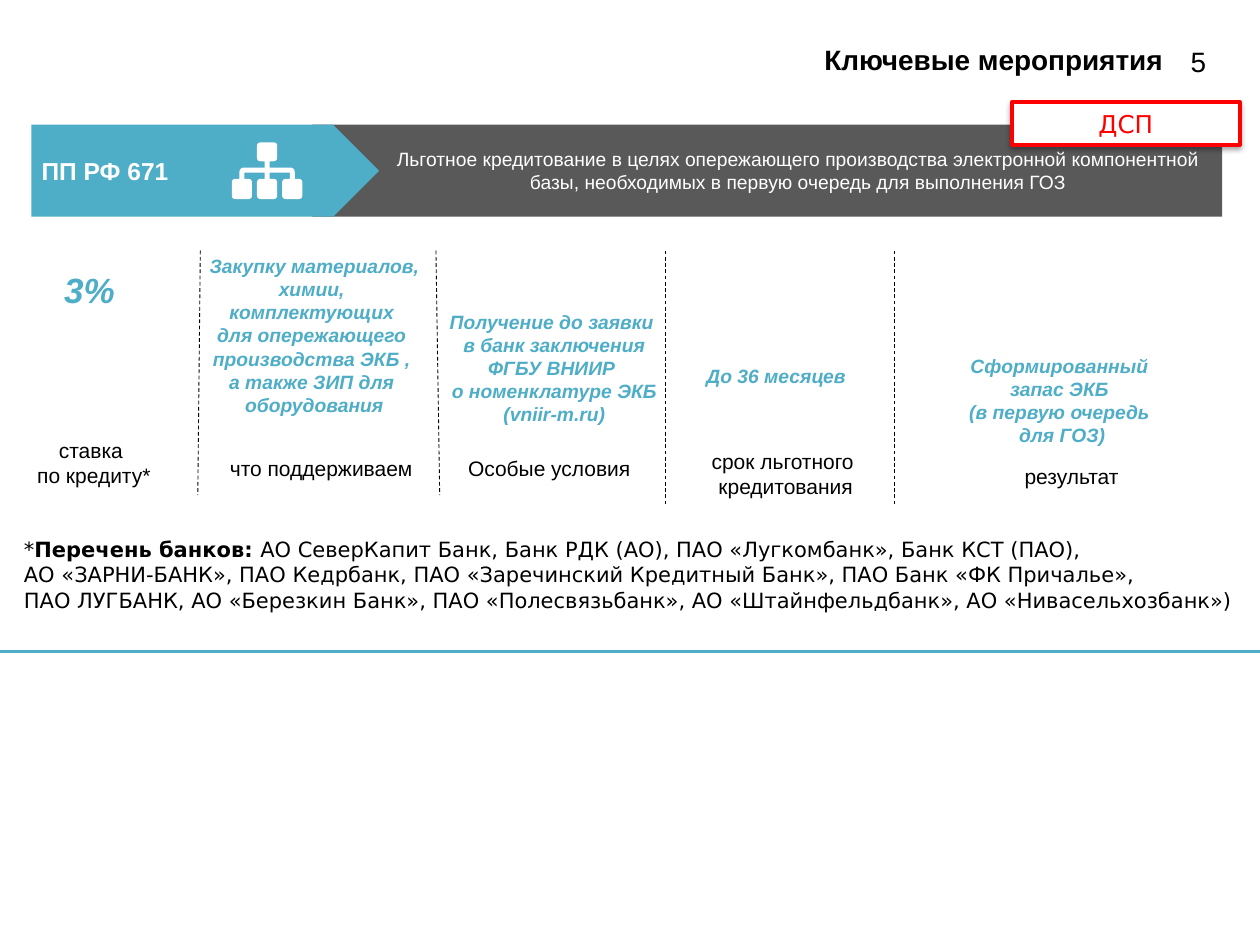
from lxml import etree
from pptx import Presentation
from pptx.dml.color import RGBColor
from pptx.enum.dml import MSO_LINE_DASH_STYLE as Dash
from pptx.enum.shapes import MSO_CONNECTOR, MSO_SHAPE
from pptx.enum.text import MSO_ANCHOR as Anchor, MSO_AUTO_SIZE as AutoSize, PP_ALIGN as Align
from pptx.oxml import parse_xml
from pptx.oxml.ns import qn
from pptx.util import Inches, Pt

COLORS = {"teal": "4EADC7", "gray": "595959", "white": "FFFFFF", "black": "000000", "red": "FF0000"}

TITLE = "Ключевые мероприятия"
PROGRAM = "ПП РФ 671"
PURPOSE = ("Льготное кредитование в целях опережающего производства электронной компонентной базы, "
           "необходимых в первую очередь для выполнения ГОЗ")

# Each text: box (left, top, width, height), paragraphs; "\n" is a line break
VALUES = [
    ((1.57, 1.97, 1.85, 1.4), ["Закупку материалов, химии, ", "комплектующих \nдля опережающего ",
                               "производства ЭКБ , ", "а также ЗИП для ", "оборудования"]),
    ((3.51, 2.41, 1.78, 1.03), ["Получение до заявки ", "в банк заключения\nФГБУ ВНИИР ",
                                "о номенклатуре ЭКБ", "(vniir-m.ru)"]),
    ((5.55, 2.84, 1.22, 0.29), ["До 36 месяцев"]),
    ((7.61, 2.76, 1.64, 0.84), ["Сформированный ", "запас ЭКБ ", "(в первую очередь ", "для ГОЗ)"]),
]
LABELS = [
    ((0.24, 3.42, 1.01, 0.5), ["ставка ", "по кредиту*"]),
    ((1.77, 3.57, 1.56, 0.3), ["что поддерживаем"]),
    ((3.66, 3.57, 1.4, 0.3), ["Особые условия"]),
    ((5.59, 3.51, 1.29, 0.5), ["срок льготного \nкредитования"]),
    ((8.08, 3.63, 0.85, 0.3), ["результат"]),
]
# Column dividers: top x, bottom x, bottom y
DIVIDERS = [(1.59, 1.57, 3.93), (3.46, 3.49, 3.93), (5.28, 5.28, 4.01), (7.1, 7.1, 4.01)]
BANKS = [
    [("*", False), ("Перечень банков: ", True),
     ("АО СеверКапит Банк, Банк РДК (АО), ПАО «Лугкомбанк», Банк КСТ (ПАО),", False)],
    "АО «ЗАРНИ-БАНК», ПАО Кедрбанк, ПАО «Заречинский Кредитный Банк», ПАО Банк «ФК Причалье»,",
    "ПАО ЛУГБАНК, АО «Березкин Банк», ПАО «Полесвязьбанк», АО «Штайнфельдбанк», АО «Нивасельхозбанк»)",
]

# Right half of the hierarchy icon: offset from its axis, y, corner radius
ICON_AXIS = 2.12
ICON_HALF = [
    (0.08, 1.13, 0.03), (0.08, 1.28, 0.03), (0.02, 1.28, 0), (0.02, 1.33, 0),
    (0.22, 1.33, 0.04), (0.22, 1.42, 0), (0.28, 1.42, 0.03), (0.28, 1.58, 0.03),
    (0.12, 1.58, 0.03), (0.12, 1.42, 0.03), (0.18, 1.42, 0), (0.18, 1.37, 0),
    (0.02, 1.37, 0), (0.02, 1.42, 0), (0.08, 1.42, 0.03), (0.08, 1.58, 0.03),
]


def rgb(name):
    return RGBColor.from_string(COLORS[name])


def write(shape, paragraphs, size, color, align=Align.CENTER, font="Arial", bold=False, italic=False,
          insets=(0.05, 0.05, 0.05, 0.05), anchor=Anchor.TOP, wrap=False, grow=True):
    tf = shape.text_frame
    tf.margin_left, tf.margin_top, tf.margin_right, tf.margin_bottom = map(Inches, insets)
    tf.vertical_anchor, tf.word_wrap = anchor, wrap
    tf.auto_size = AutoSize.SHAPE_TO_FIT_TEXT if grow else AutoSize.NONE
    for i, runs in enumerate(paragraphs):
        p = tf.add_paragraph() if i else tf.paragraphs[0]
        p.alignment = align
        for text, strong in ([(runs, bold)] if isinstance(runs, str) else runs):
            for n, line in enumerate(text.split("\n")):
                if n:
                    p.add_line_break()
                r = p.add_run()
                r.text = line
                r.font.name, r.font.size = font, Pt(size)
                r.font.bold, r.font.italic = strong, italic
                r.font.color.rgb = rgb(color)


def add_text(s, box, paragraphs, size, color, **style):
    write(s.shapes.add_textbox(*map(Inches, box)), paragraphs, size, color, **style)


def paint(sp, fill):
    sp.shadow.inherit = False
    sp.fill.solid()
    sp.fill.fore_color.rgb = rgb(fill)
    sp.line.fill.background()


def add_box(s, kind, box, fill):
    sp = s.shapes.add_shape(kind, *map(Inches, box))
    paint(sp, fill)
    return sp


def add_line(s, start, end, color, width, dash=None):
    line = s.shapes.add_connector(MSO_CONNECTOR.STRAIGHT, *map(Inches, start + end))
    line.line.color.rgb, line.line.width = rgb(color), Pt(width)
    if dash:
        line.line.dash_style = dash
    etree.SubElement(line._element.spPr, qn("a:effectLst"))


def rounded(corners, steps=5):
    """Outline points, each corner replaced by a short quadratic curve."""
    def toward(a, b, r):
        length = abs(b[0] - a[0]) + abs(b[1] - a[1])
        return [a[k] + (b[k] - a[k]) * r / length for k in (0, 1)]

    points = []
    for i, (x, y, r) in enumerate(corners):
        if not r:
            points.append((x, y))
            continue
        a = toward((x, y), corners[i - 1], r)
        b = toward((x, y), corners[(i + 1) % len(corners)], r)
        for n in range(steps + 1):
            t = n / steps
            points.append(tuple((1 - t) ** 2 * a[k] + 2 * t * (1 - t) * (x, y)[k] + t * t * b[k]
                                for k in (0, 1)))
    return [(Inches(x), Inches(y)) for x, y in points]


def add_icon(s):
    right = [(ICON_AXIS + dx, y, r) for dx, y, r in ICON_HALF]
    left = [(ICON_AXIS - dx, y, r) for dx, y, r in reversed(ICON_HALF)]
    points = rounded(right + left)
    builder = s.shapes.build_freeform(*points[0])
    builder.add_line_segments(points[1:], close=True)
    paint(builder.convert_to_shape(), "white")


def add_stamp(s):
    stamp = add_box(s, MSO_SHAPE.RECTANGLE, (8.03, 0.81, 1.81, 0.34), "white")
    stamp.line.color.rgb, stamp.line.width = rgb("red"), Pt(2)
    effects = stamp._element.spPr.find(qn("a:effectLst"))
    effects.append(parse_xml(
        '<a:outerShdw xmlns:a="http://schemas.openxmlformats.org/drawingml/2006/main" '
        f'blurRad="{Pt(3)}" dist="{Pt(1.8)}" dir="5400000" rotWithShape="0">'
        f'<a:srgbClr val="{COLORS["black"]}"><a:alpha val="35000"/></a:srgbClr></a:outerShdw>'))
    write(stamp, ["ДСП"], 14, "red", font="DejaVu Sans", anchor=Anchor.MIDDLE, wrap=True)


def main():
    prs = Presentation()
    prs.slide_width, prs.slide_height = Inches(10), Inches(7.5)
    s = prs.slides.add_slide(prs.slide_layouts[5])

    # Title and page number
    title = s.shapes.title
    title.left, title.top, title.width, title.height = map(Inches, (4.33, 0.29, 5, 0.37))
    write(title, [TITLE], 16, "black", align=Align.RIGHT, bold=True, wrap=True,
          insets=(0.1, 0.05, 0.1, 0.05))
    add_text(s, (9.45, 0.35, 0.12, 0.27), ["5"], 16, "black", align=Align.RIGHT, insets=(0, 0, 0, 0))

    # Header band
    band = add_box(s, MSO_SHAPE.RECTANGLE, (2.48, 0.99, 7.22, 0.73), "gray")
    write(band, [PURPOSE], 11, "white", insets=(0.57, 0.08, 0.08, 0.08),
          anchor=Anchor.MIDDLE, wrap=True, grow=False)
    tag = add_box(s, MSO_SHAPE.PENTAGON, (0.25, 0.99, 2.76, 0.73), "teal")
    write(tag, [PROGRAM], 14, "white", align=Align.LEFT, bold=True, insets=(0.08,) * 4,
          anchor=Anchor.MIDDLE, wrap=True, grow=False)
    add_icon(s)

    # Columns: values, labels, dividers
    add_text(s, (0.46, 2.08, 0.51, 0.44), ["3%"], 20, "teal", align=Align.LEFT, bold=True, italic=True)
    for i, (box, lines) in enumerate(VALUES):
        add_text(s, box, lines, 11, "teal", bold=True, italic=True, wrap=i == 0)
    for box, lines in LABELS:
        add_text(s, box, lines, 12, "black")
    for x1, x2, bottom in DIVIDERS:
        add_line(s, (x1, 1.99), (x2, bottom), "black", 0.5, Dash.DASH)

    # Stamp, bank list, closing rule
    add_stamp(s)
    add_text(s, (0.14, 4.21, 9.77, 0.71), BANKS, 12, "black", align=Align.LEFT, font="DejaVu Sans")
    add_line(s, (0, 5.17), (10, 5.17), "teal", 2)
    prs.save("out.pptx")


if __name__ == "__main__":
    main()
